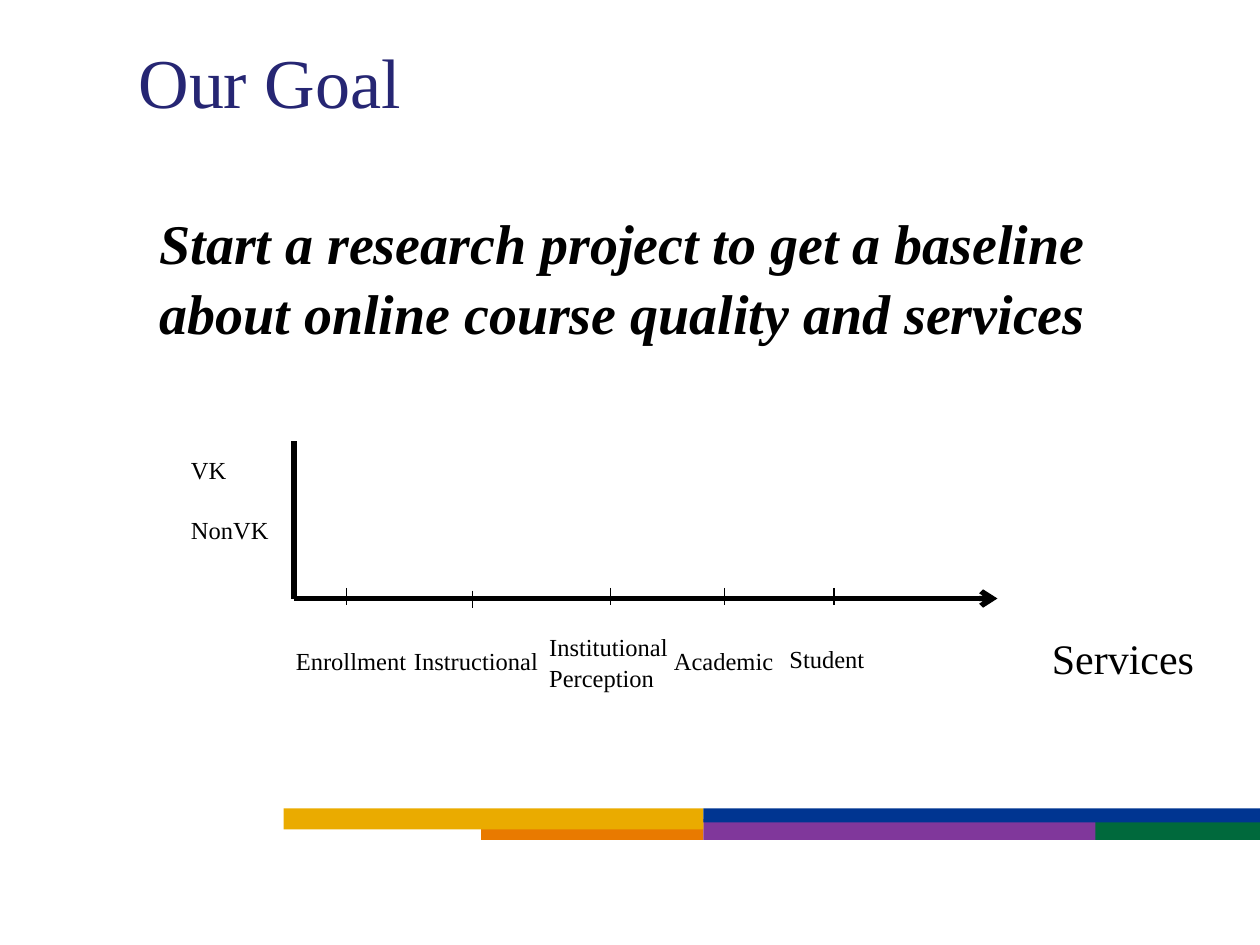
from dataclasses import dataclass

from lxml.etree import SubElement
from pptx import Presentation
from pptx.dml.color import RGBColor
from pptx.enum.shapes import MSO_CONNECTOR as Connector, MSO_SHAPE as Shape
from pptx.enum.text import MSO_ANCHOR as Anchor, PP_ALIGN as Align
from pptx.oxml.ns import qn
from pptx.util import Pt


@dataclass(frozen=True)
class Theme:
    font: str = "Times New Roman"
    title: str = "262673"
    ink: str = "000000"
    orange: str = "E97A00"
    purple: str = "80379B"
    gold: str = "EAAB00"
    green: str = "00693C"
    blue: str = "003591"
    title_size: float = 40
    statement_size: float = 32
    axis_size: float = 24
    label_size: float = 14
    line_spacing: float = 1.04
    axis_width: float = 3
    tick_width: float = 0.75


THEME = Theme()


def add_run(paragraph, text, size, color, bold=False, italic=False):
    paragraph.alignment = Align.LEFT
    run = paragraph.add_run()
    run.text = text
    font = run.font
    font.name, font.size = THEME.font, Pt(size)
    font.bold, font.italic = bold, italic
    font.color.rgb = RGBColor.from_string(color)


def add_text(slide, box, lines, size, gap=0, **style):
    shape = slide.shapes.add_textbox(*map(Pt, box))
    frame = shape.text_frame
    frame.word_wrap = True
    for index, line in enumerate(lines):
        paragraph = frame.add_paragraph() if index else frame.paragraphs[0]
        paragraph.line_spacing = THEME.line_spacing
        if index:
            paragraph.space_before = Pt(gap)
        add_run(paragraph, line, size, THEME.ink, **style)


def add_line(slide, start, end, width, arrow=False):
    line = slide.shapes.add_connector(Connector.STRAIGHT, *map(Pt, (*start, *end)))
    line.line.width = Pt(width)
    line.line.color.rgb = RGBColor.from_string(THEME.ink)
    properties = line._element.spPr
    if arrow:
        SubElement(properties.find(qn("a:ln")), qn("a:tailEnd"), type="arrow")
    SubElement(properties, qn("a:effectLst"))


def add_title(slide, box, text):
    title = slide.shapes.title
    title.left, title.top, title.width, title.height = map(Pt, box)
    frame = title.text_frame
    frame.vertical_anchor = Anchor.TOP
    frame.margin_top = Pt(8)
    add_run(frame.paragraphs[0], text, THEME.title_size, THEME.title)


def add_color_bars(slide, box):
    left, top, width, height = box
    split = 240
    bars = [
        (113, 6, split - 113, height - 6, THEME.orange),
        (split, 6, 224.5, height - 6, THEME.purple),
        (0, 0, split, 12, THEME.gold),
        (split + 224, 6, width - split - 224, height - 6, THEME.green),
        (split, 0, width - split, 8, THEME.blue),
    ]
    for x, y, bar_width, bar_height, color in bars:
        bar = slide.shapes.add_shape(
            Shape.RECTANGLE, Pt(left + x), Pt(top + y), Pt(bar_width), Pt(bar_height)
        )
        bar.shadow.inherit = False
        bar.fill.solid()
        bar.fill.fore_color.rgb = RGBColor.from_string(color)
        bar.line.fill.background()


def add_services_axes(slide, box):
    left, top, width, height = box
    base = top + height
    add_line(slide, (left, top), (left, base), THEME.axis_width)
    add_line(slide, (left, base), (left + width, base), THEME.axis_width, arrow=True)
    add_text(slide, (left - 66, top + 3.6, 66, 58), ["VK", "NonVK"], THEME.label_size, gap=17)

    services = [
        ("Enrollment", 30, -6, -6, 23, 78),
        ("Instructional", 102, -4.5, 61.5, 23, 91.5),
        ("Institutional Perception", 181, -6, 138.7, 15, 84),
        ("Academic", 246, -6, 210, 23, 78),
        ("Student", 308.6, -6, 276, 21.6, 65),
    ]
    for name, tick, rise, x, drop, label_width in services:
        tick_top = base + rise
        add_line(slide, (left + tick, tick_top), (left + tick, tick_top + 10), THEME.tick_width)
        add_text(slide, (left + x, base + drop, label_width, 24.5), [name], THEME.label_size)
    add_text(slide, (left + 426, base + 15, 108, 36), ["Services"], THEME.axis_size)


def build_goal_slide(presentation):
    slide = presentation.slides.add_slide(presentation.slide_layouts[5])
    add_color_bars(slide, (162, 462, 558, 18))
    add_title(slide, (72, 14, 564, 57.5), "Our Goal")
    add_text(
        slide,
        (84, 114, 558, 85),
        ["Start a research project to get a baseline about online course quality and services"],
        THEME.statement_size,
        bold=True,
        italic=True,
    )
    add_services_axes(slide, (168, 252, 402, 90))


def main():
    presentation = Presentation()
    presentation.slide_width, presentation.slide_height = Pt(720), Pt(540)
    build_goal_slide(presentation)
    presentation.save("out.pptx")


if __name__ == "__main__":
    main()
